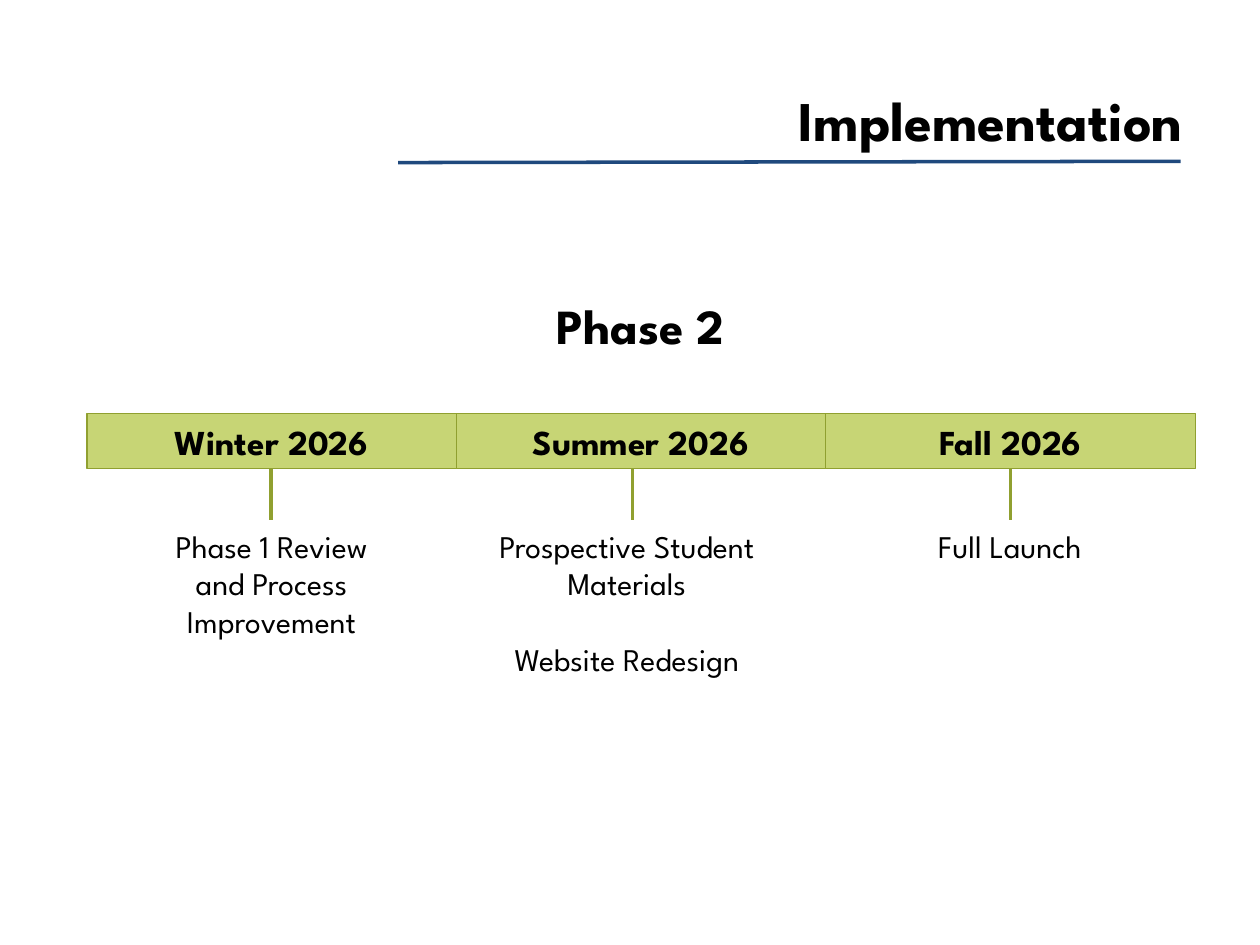
from lxml import etree
from pptx import Presentation
from pptx.dml.color import RGBColor
from pptx.enum import shapes, text
from pptx.oxml.ns import qn
from pptx.util import Pt

COLORS = {"ink": "000000", "rule": "1F497D", "band": "C7D575", "edge": "90A030"}
FONT = "League Spartan"
CENTER, RIGHT = text.PP_ALIGN.CENTER, text.PP_ALIGN.RIGHT


class TimelineSlide:
    """Hold the style and the current slide, and add each kind of element."""

    def __init__(self, presentation):
        self.slide = presentation.slides.add_slide(presentation.slide_layouts[5])

    def color(self, name):
        return RGBColor.from_string(COLORS[name])

    def set_text(self, shape, lines, size, bold=False, align=CENTER, gap=0,
                 anchor=text.MSO_ANCHOR.TOP):
        frame = shape.text_frame
        frame.text = "\n".join(lines)
        frame_format = {"word_wrap": True, "vertical_anchor": anchor,
                        "auto_size": text.MSO_AUTO_SIZE.SHAPE_TO_FIT_TEXT,
                        "margin_left": Pt(7.2), "margin_right": Pt(7.2),
                        "margin_top": Pt(3.6), "margin_bottom": Pt(3.6)}
        for name, value in frame_format.items():
            setattr(frame, name, value)
        for index, paragraph in enumerate(frame.paragraphs):
            paragraph.alignment = align
            paragraph.space_before = Pt(gap if index else 0)
            for run in paragraph.runs:
                font_format = {"name": FONT, "size": Pt(size), "bold": bold}
                for name, value in font_format.items():
                    setattr(run.font, name, value)
                run.font.color.rgb = self.color("ink")

    def title(self, words, left, top, width, height, size):
        shape = self.slide.shapes.title
        box = {"left": left, "top": top, "width": width, "height": height}
        for name, value in box.items():
            setattr(shape, name, Pt(value))
        self.set_text(shape, [words], size, bold=True, align=RIGHT)

    def label(self, lines, left, top, width, height, size, bold=False, gap=0):
        shape = self.slide.shapes.add_textbox(Pt(left), Pt(top), Pt(width), Pt(height))
        self.set_text(shape, lines, size, bold, gap=gap)

    def band(self, words, left, top, width, height):
        shape = self.slide.shapes.add_shape(
            shapes.MSO_SHAPE.RECTANGLE, Pt(left), Pt(top), Pt(width), Pt(height))
        shape.shadow.inherit = False
        shape.fill.solid()
        shape.fill.fore_color.rgb = self.color("band")
        shape.line.color.rgb = self.color("edge")
        shape.line.width = Pt(0.75)
        self.set_text(shape, [words], 20, bold=True, anchor=text.MSO_ANCHOR.MIDDLE)

    def line(self, start_x, start_y, end_x, end_y, color):
        connector = self.slide.shapes.add_connector(
            shapes.MSO_CONNECTOR.STRAIGHT,
            Pt(start_x), Pt(start_y), Pt(end_x), Pt(end_y))
        connector.line.color.rgb = self.color(color)
        connector.line.width = Pt(2)
        etree.SubElement(connector._element.spPr, qn("a:effectLst"))


def main():
    presentation = Presentation()
    presentation.slide_width, presentation.slide_height = Pt(720), Pt(540)
    slide = TimelineSlide(presentation)

    slide.title("Implementation", 200.9, 45.4, 482.4, 46.1, 32)
    slide.line(227.5, 92.9, 674.6, 92.2, "rule")
    slide.label(["Phase 2"], 188.6, 165.6, 355, 41, 28, bold=True)

    band_left, band_top, band_width, band_height = 49.7, 236.2, 211.1, 31.7
    band_bottom, caption_top = band_top + band_height, 297.4
    stages = [
        ("Winter 2026", 154.8, ["Phase 1 Review and Process Improvement"], 79.2, 151.9, 72.7),
        ("Summer 2026", 361.4, ["Prospective Student Materials", "Website Redesign"],
         274.3, 167.8, 116.6),
        ("Fall 2026", 577.4, ["Full Launch"], 501.1, 151.9, 28.8),
    ]
    for index, (season, stem, lines, left, width, height) in enumerate(stages):
        slide.band(season, band_left + index * band_width, band_top, band_width, band_height)
        slide.label(lines, left, caption_top, width, height, 18, gap=21.8)
        slide.line(stem, band_bottom, stem, caption_top, "edge")

    presentation.save("out.pptx")


if __name__ == "__main__":
    main()
